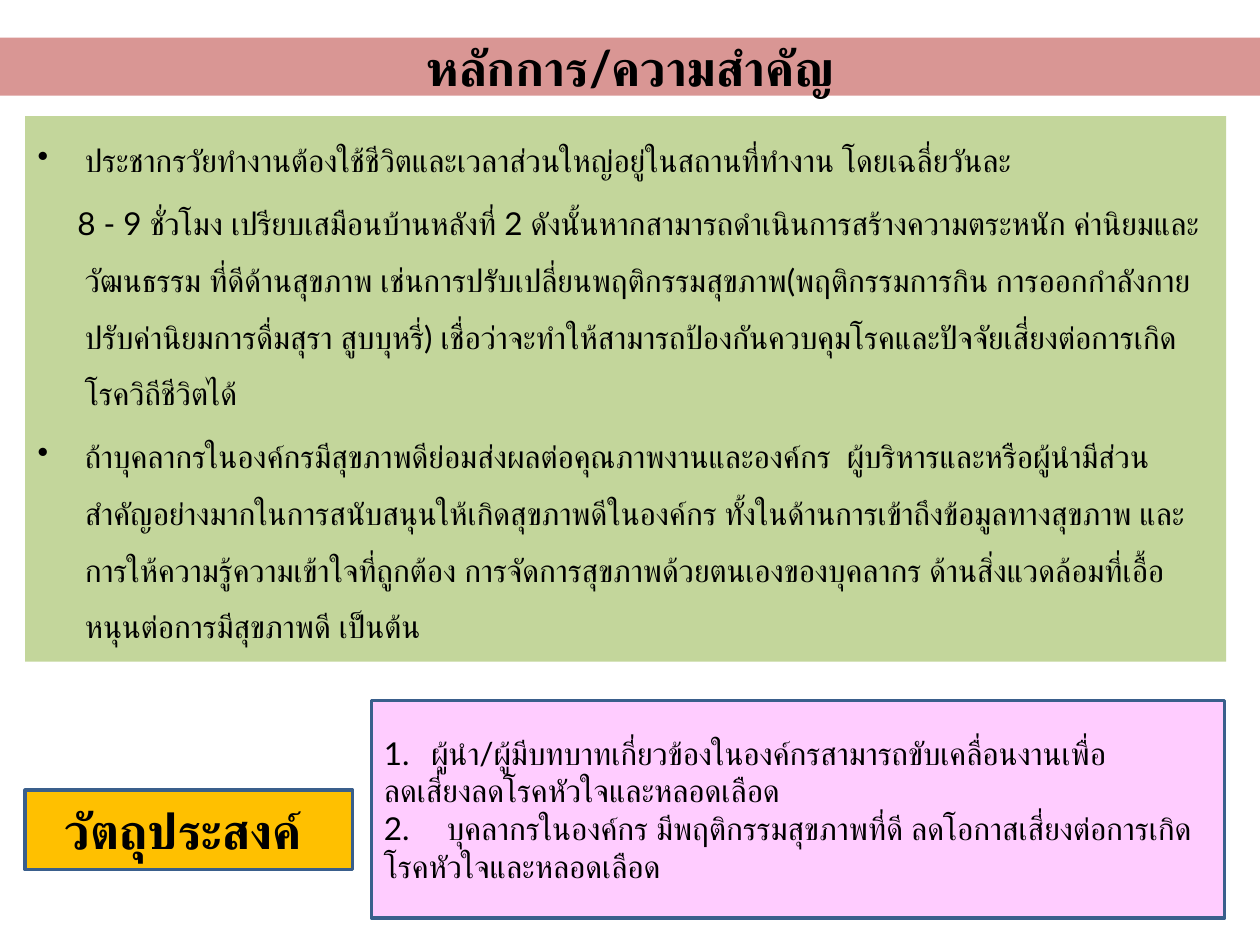
from dataclasses import dataclass

from lxml import etree
from pptx import Presentation
from pptx.dml.color import RGBColor
from pptx.enum.lang import MSO_LANGUAGE_ID
from pptx.enum.shapes import MSO_SHAPE
from pptx.enum.text import MSO_ANCHOR, PP_ALIGN
from pptx.oxml.ns import qn
from pptx.slide import Slide
from pptx.util import Cm, Pt

RECT = MSO_SHAPE.RECTANGLE
TOP, MIDDLE = MSO_ANCHOR.TOP, MSO_ANCHOR.MIDDLE
LEFT, CENTER = PP_ALIGN.LEFT, PP_ALIGN.CENTER
THAI = MSO_LANGUAGE_ID.THAI


@dataclass(frozen=True)
class Theme:
    font: str = "Lato"
    ink: str = "000000"
    rose: str = "D99694"
    green: str = "C3D69B"
    gold: str = "FFC000"
    pink: str = "FFCCFF"
    edge: str = "3A5F8C"
    head: int = 28
    body: int = 18
    rule: int = 2


@dataclass(frozen=True)
class Para:
    text: str
    margin: float = 0
    indent: float = 0
    mark: str = ""
    number: bool = False
    tab: float = 0


@dataclass(frozen=True)
class Panel:
    box: tuple[float, float, float, float]
    fill: str
    paras: tuple[Para, ...]
    title: bool = False
    framed: bool = False
    anchor: MSO_ANCHOR = MIDDLE
    leading: float = 1.0
    gap: float = 0


THEME = Theme()
HANG = 0.95

PANELS = (
    Panel((0, 0.76, 25.4, 1.17), THEME.rose,
          (Para("หลักการ/ความสำคัญ"),), title=True),
    Panel((0.51, 2.34, 24.21, 11), THEME.green, (
        Para("ประชากรวัยทำงานต้องใช้ชีวิตและเวลาส่วนใหญ่อยู่ในสถานที่ทำงาน "
             "โดยเฉลี่ยวันละ", HANG, -HANG, mark="•"),
        Para("8 - 9 ชั่วโมง เปรียบเสมือนบ้านหลังที่ 2 "
             "ดังนั้นหากสามารถดำเนินการสร้างความตระหนัก ค่านิยมและวัฒนธรรม "
             "ที่ดีด้านสุขภาพ เช่นการปรับเปลี่ยนพฤติกรรมสุขภาพ(พฤติกรรมการกิน "
             "การออกกำลังกาย ปรับค่านิยมการดื่มสุรา สูบบุหรี่) "
             "เชื่อว่าจะทำให้สามารถป้องกันควบคุมโรคและปัจจัยเสี่ยงต่อการเกิดโรควิถีชีวิตได้",
             HANG, -0.15),
        Para("ถ้าบุคลากรในองค์กรมีสุขภาพดีย่อมส่งผลต่อคุณภาพงานและองค์กร  "
             "ผู้บริหารและหรือผู้นำมีส่วนสำคัญอย่างมากในการสนับสนุนให้เกิดสุขภาพดีในองค์กร "
             "ทั้งในด้านการเข้าถึงข้อมูลทางสุขภาพ และการให้ความรู้ความเข้าใจที่ถูกต้อง "
             "การจัดการสุขภาพด้วยตนเองของบุคลากร "
             "ด้านสิ่งแวดล้อมที่เอื้อหนุนต่อการมีสุขภาพดี เป็นต้น",
             HANG, -HANG, mark="•"),
    ), anchor=TOP, leading=1.5, gap=3.6),
    Panel((0.51, 15.93, 6.6, 1.6), THEME.gold,
          (Para("วัตถุประสงค์ "),), title=True, framed=True),
    Panel((7.49, 14.12, 17.2, 4.39), THEME.pink, (
        Para("ผู้นำ/ผู้มีบทบาทเกี่ยวข้องในองค์กรสามารถขับเคลื่อนงานเพื่อ",
             HANG, -HANG, number=True),
        Para("ลดเสี่ยงลดโรคหัวใจและหลอดเลือด", HANG, -HANG),
        Para("2.\tบุคลากรในองค์กร มีพฤติกรรมสุขภาพที่ดี "
             "ลดโอกาสเสี่ยงต่อการเกิดโรคหัวใจและหลอดเลือด", tab=1.02),
    ), framed=True),
)


def color(code: str) -> RGBColor:
    return RGBColor.from_string(code)


def layout(line, para: Para) -> None:
    props = line._p.get_or_add_pPr()
    props.set("marL", str(Cm(para.margin)))
    props.set("indent", str(Cm(para.indent)))
    if para.mark:
        etree.SubElement(props, qn("a:buChar"), char=para.mark)
    elif para.number:
        etree.SubElement(props, qn("a:buAutoNum"), type="arabicPeriod")
    else:
        etree.SubElement(props, qn("a:buNone"))
    if para.tab:
        tabs = etree.SubElement(props, qn("a:tabLst"))
        etree.SubElement(tabs, qn("a:tab"), pos=str(Cm(para.tab)), algn="l")


def write(line, text: str, title: bool) -> None:
    run = line.add_run()
    run.text = text
    font = run.font
    font.name = THEME.font
    font.size = Pt(THEME.head if title else THEME.body)
    font.bold = title
    font.color.rgb = color(THEME.ink)
    font.language_id = THAI
    etree.SubElement(run._r.get_or_add_rPr(), qn("a:cs"), typeface=THEME.font)


def draw(slide: Slide, panel: Panel) -> None:
    shape = slide.shapes.add_shape(RECT, *map(Cm, panel.box))
    shape.shadow.inherit = False
    shape.fill.solid()
    shape.fill.fore_color.rgb = color(panel.fill)
    if panel.framed:
        shape.line.color.rgb = color(THEME.edge)
        shape.line.width = Pt(THEME.rule)
    else:
        shape.line.fill.background()
    frame = shape.text_frame
    frame.word_wrap = True
    frame.vertical_anchor = panel.anchor
    for index, para in enumerate(panel.paras):
        line = frame.add_paragraph() if index else frame.paragraphs[0]
        layout(line, para)
        line.alignment = CENTER if panel.title else LEFT
        line.line_spacing = panel.leading
        line.space_before = Pt(panel.gap if index else 0)
        write(line, para.text, panel.title)


def main() -> None:
    deck = Presentation()
    deck.slide_width, deck.slide_height = Cm(25.4), Cm(19.05)
    slide = deck.slides.add_slide(deck.slide_layouts[6])
    for panel in PANELS:
        draw(slide, panel)
    deck.save("out.pptx")


if __name__ == "__main__":
    main()
